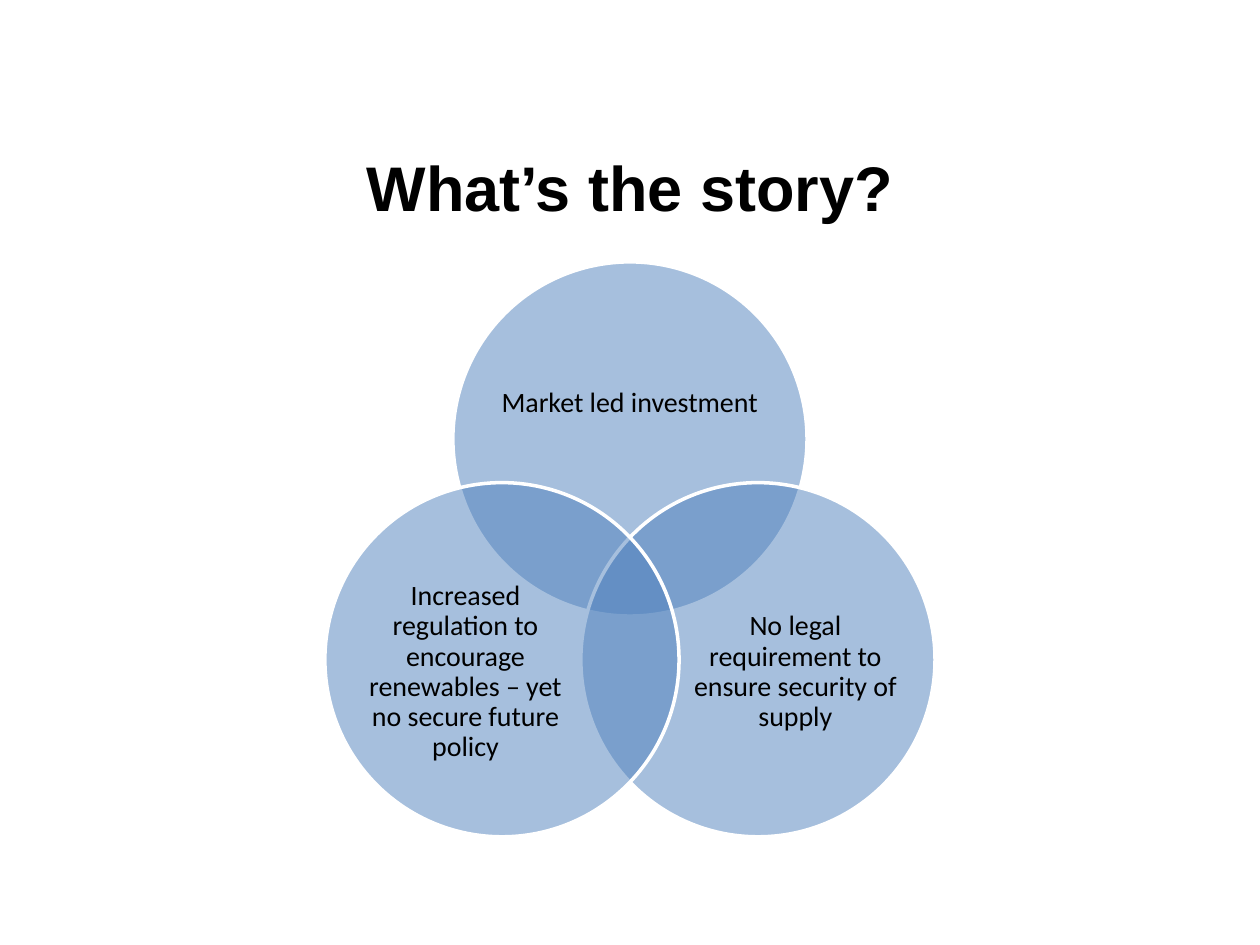
from pptx import Presentation
from pptx.dml.color import RGBColor
from pptx.enum.shapes import MSO_SHAPE as Shape
from pptx.enum.text import MSO_ANCHOR as Anchor, PP_ALIGN as Align
from pptx.oxml.ns import qn
from pptx.util import Cm, Pt
from lxml.etree import SubElement

DIAMETER = 7.14
TITLE_FONT = {"name": "Arial", "size": Pt(36), "bold": True}
LABEL_FONT = {"name": "Calibri", "size": Pt(16), "bold": False}

# Each theme: circle centre, label box (left, top, width, height), wording; in cm
THEMES = [
    ((12.7, 8.85), (10.08, 6.53, 5.23, 3.2), "Market led investment"),
    ((15.28, 13.3), (13.89, 11.58, 4.29, 3.94),
     "No legal requirement to ensure security of supply"),
    ((10.12, 13.3), (7.24, 11.58, 4.29, 3.94),
     "Increased regulation to encourage renewables – yet no secure future policy"),
]


def color(hex_code):
    return RGBColor.from_string(hex_code)


def add_text(slide, box, wording, font_format, anchor, top_inset=0, spacing=1.0):
    label = slide.shapes.add_textbox(*map(Cm, box))
    frame = label.text_frame
    frame_format = {
        "word_wrap": True, "vertical_anchor": anchor, "margin_left": 0,
        "margin_right": 0, "margin_top": Cm(top_inset), "margin_bottom": 0,
    }
    for key, value in frame_format.items():
        setattr(frame, key, value)
    paragraph = frame.paragraphs[0]
    paragraph.alignment = Align.CENTER
    paragraph.line_spacing = spacing
    run = paragraph.add_run()
    run.text = wording
    for key, value in font_format.items():
        setattr(run.font, key, value)
    run.font.color.rgb = color("000000")


def add_venn_circle(slide, center):
    left, top = (Cm(middle - DIAMETER / 2) for middle in center)
    circle = slide.shapes.add_shape(
        Shape.OVAL, left, top, Cm(DIAMETER), Cm(DIAMETER))
    circle.shadow.inherit = False
    circle.fill.solid()
    circle.fill.fore_color.rgb = color("4F81BD")
    circle.line.color.rgb = color("FFFFFF")
    circle.line.width = Pt(2)
    # Half-transparent fill, so that the overlaps show darker
    fill_color = circle.fill._xPr.find(qn("a:solidFill"))[0]
    SubElement(fill_color, qn("a:alpha"), val="50000")


def main():
    deck = Presentation()
    deck.slide_width, deck.slide_height = Cm(25.4), Cm(19.05)
    slide = deck.slides.add_slide(deck.slide_layouts[6])

    # Title
    add_text(slide, (1.27, 2.72, 22.86, 2.39), "What’s the story?",
             TITLE_FONT, Anchor.TOP, top_inset=0.28)

    # Venn diagram
    for center, label_box, wording in THEMES:
        add_venn_circle(slide, center)
        add_text(slide, label_box, wording, LABEL_FONT, Anchor.MIDDLE, spacing=0.9)

    deck.save("out.pptx")


if __name__ == "__main__":
    main()
